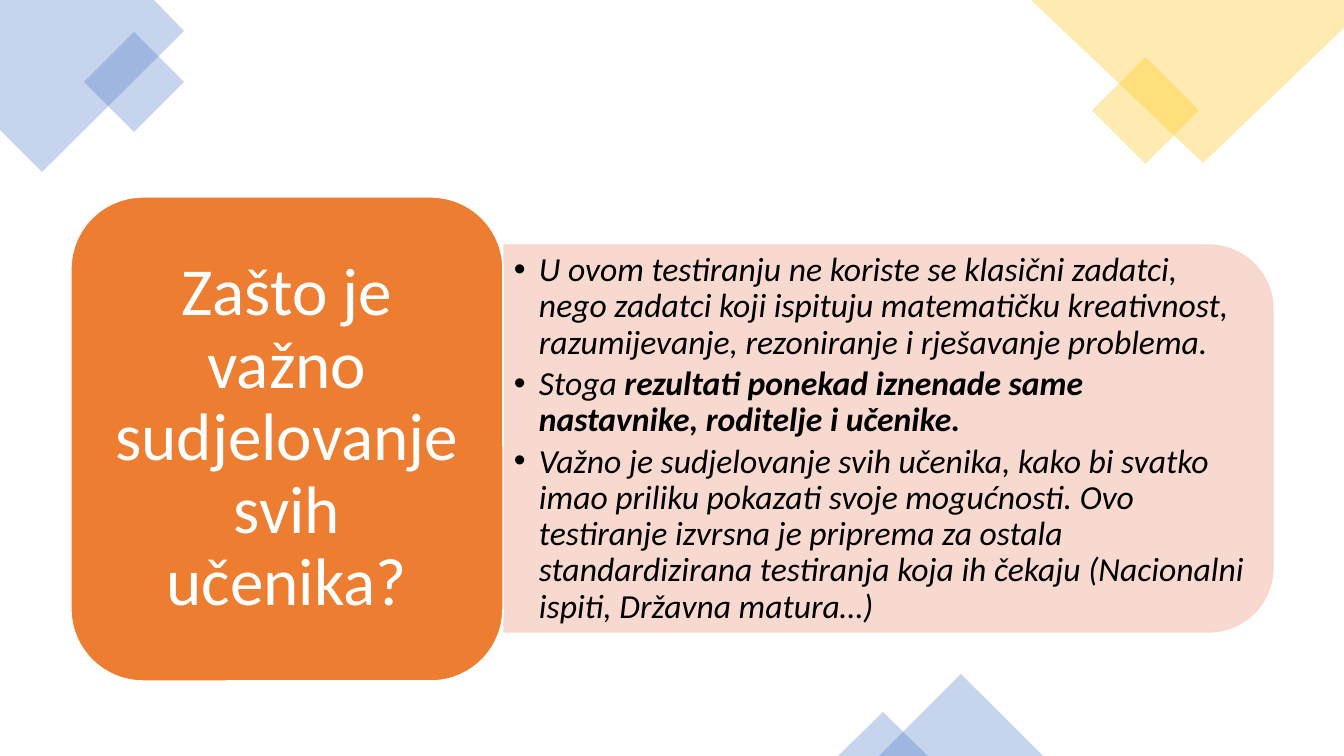
from lxml import etree
from pptx import Presentation, util as u
from pptx.dml.color import RGBColor
from pptx.enum import shapes, text
from pptx.oxml.ns import qn

BLUE, YELLOW, ORANGE, PINK = "4472C4", "FFC000", "ED7D31", "F7D5CB"
BLACK, WHITE = "000000", "FFFFFF"
EMU_PER_PX = 9144000 / 1008
SIZE = (1344, 756)

TITLE = "Zašto je važno sudjelovanje svih učenika?"
# Each bullet is a list of (words, bold)
BULLETS = [
    [("U ovom testiranju ne koriste se klasični zadatci, nego zadatci koji ispituju "
      "matematičku kreativnost, razumijevanje, rezoniranje i rješavanje problema.", False)],
    [("Stoga ", False),
     ("rezultati ponekad iznenade same nastavnike, roditelje i učenike.", True)],
    [("Važno je sudjelovanje svih učenika, kako bi svatko imao priliku pokazati svoje "
      "mogućnosti. Ovo testiranje izvrsna je priprema za ostala standardizirana "
      "testiranja koja ih čekaju (Nacionalni ispiti, Državna matura…)", False)],
]

CORNERS = [
    (BLUE, [(0, 0), (154, 0), (184, 31), (42, 172), (0, 130)]),
    (YELLOW, [(1031, 0), (1344, 0), (1344, 28), (1203, 163)]),
]
SHAPE = shapes.MSO_SHAPE
ACCENTS = [
    (SHAPE.DIAMOND, BLUE, (84, 32, 100, 100)),
    (SHAPE.DIAMOND, YELLOW, (1092, 57, 107, 107)),
    (SHAPE.ISOSCELES_TRIANGLE, BLUE, (879, 674, 164, 82)),
    (SHAPE.ISOSCELES_TRIANGLE, BLUE, (838, 712, 90, 44)),
]
PANEL = (504, 245, 769, 387)
PANEL_TEXT = (504, 264, 750, 350)
CARD = (71, 197, 432, 484)
CARD_TEXT = (92, 218, 390, 442)


def px(n):
    return u.Emu(round(n * EMU_PER_PX))


def rgb(value):
    return RGBColor.from_string(value)


def paint(sp, fill, alpha=100, line=None):
    """Set fill and outline, both at the given opacity in percent."""
    sp.shadow.inherit = False
    sp.fill.solid()
    sp.fill.fore_color.rgb = rgb(fill)
    if line:
        sp.line.color.rgb = rgb(line)
        sp.line.width = u.Pt(1)
    else:
        sp.line.fill.background()
    if alpha < 100:
        for color in sp._element.spPr.iter(qn("a:srgbClr")):
            etree.SubElement(color, qn("a:alpha"), val=str(alpha * 1000))


def add_shape(s, kind, box, fill, **style):
    sp = s.shapes.add_shape(kind, *map(px, box))
    paint(sp, fill, **style)
    return sp


def set_frame(sp, box, margin_x, margin_y):
    sp.left, sp.top, sp.width, sp.height = map(px, box)
    tf = sp.text_frame
    tf.word_wrap = True
    tf.auto_size = text.MSO_AUTO_SIZE.NONE
    tf.vertical_anchor = text.MSO_ANCHOR.MIDDLE
    tf.margin_left = tf.margin_right = px(margin_x)
    tf.margin_top = tf.margin_bottom = px(margin_y)
    return tf


def add_run(p, words, size, color, bold=False, italic=False):
    r = p.add_run()
    r.text = words
    f = r.font
    f.name, f.size, f.bold, f.italic = "Calibri", u.Pt(size), bold, italic
    f.color.rgb = rgb(color)


def add_bullet(p, indent):
    pPr = p._p.get_or_add_pPr()
    pPr.set("marL", str(px(indent)))
    pPr.set("indent", str(-px(indent)))
    color = etree.SubElement(pPr, qn("a:buClr"))
    etree.SubElement(color, qn("a:srgbClr"), val=BLACK)
    etree.SubElement(pPr, qn("a:buFont"), typeface="Arial")
    etree.SubElement(pPr, qn("a:buChar"), char="•")


def add_decor(s):
    for color, points in CORNERS:
        outline = s.shapes.build_freeform(*points[0], scale=EMU_PER_PX)
        outline.add_line_segments(points[1:], close=True)
        paint(outline.convert_to_shape(), color, alpha=30)
    for kind, color, box in ACCENTS:
        add_shape(s, kind, box, color, alpha=30)


def add_panel(s):
    # The preset rounds its top corners, so it is drawn upright and turned
    x, y, w, h = PANEL
    upright = (x + (w - h) / 2, y + (h - w) / 2, h, w)
    sp = add_shape(s, SHAPE.ROUND_2_SAME_RECTANGLE, upright, PINK, alpha=90, line=PINK)
    sp.rotation = 90
    tf = set_frame(s.shapes.add_textbox(0, 0, 0, 0), PANEL_TEXT, 10, 5)
    for i, runs in enumerate(BULLETS):
        p = tf.add_paragraph() if i else tf.paragraphs[0]
        p.level = 1
        p.line_spacing = 0.9
        p.space_before = u.Pt(3.6 if i else 0)
        add_bullet(p, 25)
        for words, bold in runs:
            add_run(p, words, 24, BLACK, bold=bold, italic=True)


def add_card(s):
    add_shape(s, SHAPE.ROUNDED_RECTANGLE, CARD, ORANGE, line=WHITE)
    title = s.shapes.title
    s.shapes._spTree.append(title._element)  # bring the title in front of its card
    p = set_frame(title, CARD_TEXT, 20, 10).paragraphs[0]
    p.alignment = text.PP_ALIGN.CENTER
    p.line_spacing = 0.9
    p.space_before = u.Pt(0)
    add_run(p, TITLE, 48, WHITE)


def main():
    prs = Presentation()
    prs.slide_width, prs.slide_height = map(px, SIZE)
    s = prs.slides.add_slide(prs.slide_layouts[5])
    add_decor(s)
    add_panel(s)
    add_card(s)
    prs.save("out.pptx")


if __name__ == "__main__":
    main()
